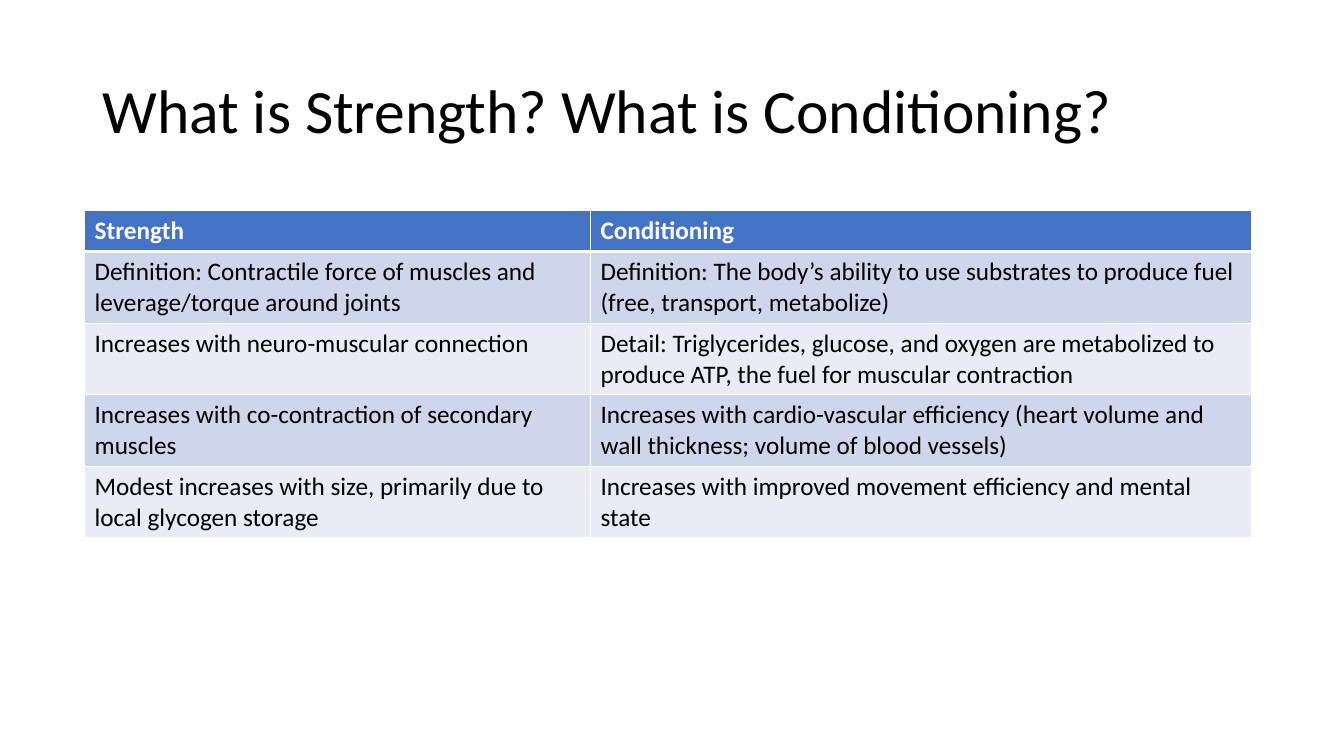
from dataclasses import dataclass

from lxml import etree
from pptx import Presentation
from pptx import util as u
from pptx.dml import color
from pptx.enum import text
from pptx.oxml import ns

Pt = u.Pt


@dataclass(frozen=True)
class Theme:
    font: str = "Calibri"
    title_size: int = 44
    table_size: int = 18
    ink: str = "000000"
    white: str = "FFFFFF"
    header: str = "4472C4"
    bands: tuple = ("CFD5EA", "E9EBF5")
    thin: int = 1
    thick: int = 3


THEME = Theme()
TITLE = "What is Strength? What is Conditioning?"
COLUMN_WIDTHS = (361.4, 472.4)
HEADER_HEIGHT = 29.2
ROW_HEIGHT = 51.1
ROWS = (
    ("Strength", "Conditioning"),
    (
        "Definition: Contractile force of muscles and leverage/torque around joints",
        "Definition: The body’s ability to use substrates to produce fuel (free, transport, metabolize)",
    ),
    (
        "Increases with neuro-muscular connection",
        "Detail: Triglycerides, glucose, and oxygen are metabolized to produce ATP, the fuel for muscular contraction",
    ),
    (
        "Increases with co-contraction of secondary muscles",
        "Increases with cardio-vascular efficiency (heart volume and wall thickness; volume of blood vessels)",
    ),
    (
        "Modest increases with size, primarily due to local glycogen storage",
        "Increases with improved movement efficiency and mental state",
    ),
)


def add_run(paragraph, wording, size, ink, bold=False):
    run = paragraph.add_run()
    run.text = wording
    run.font.name = THEME.font
    run.font.size = Pt(size)
    run.font.bold = bold
    run.font.color.rgb = color.RGBColor.from_string(ink)


def add_title(slide):
    title = slide.shapes.title
    title.left, title.top, title.width, title.height = Pt(66), Pt(28.8), Pt(828), Pt(104.4)
    frame = title.text_frame
    frame.word_wrap = True
    frame.auto_size = text.MSO_AUTO_SIZE.NONE
    frame.vertical_anchor = text.MSO_ANCHOR.MIDDLE
    paragraph = frame.paragraphs[0]
    paragraph.alignment = text.PP_ALIGN.LEFT
    paragraph.line_spacing = 0.9
    add_run(paragraph, TITLE, THEME.title_size, THEME.ink)


def add_border(cell, side, width):
    properties = cell._tc.get_or_add_tcPr()
    line = etree.SubElement(properties, ns.qn(f"a:ln{side}"), w=str(Pt(width)))
    fill = etree.SubElement(line, ns.qn("a:solidFill"))
    etree.SubElement(fill, ns.qn("a:srgbClr"), val=THEME.white)


def format_cell(cell, wording, row_index):
    is_header = row_index == 0
    top = THEME.thick if row_index == 1 else THEME.thin
    bottom = THEME.thick if is_header else THEME.thin
    for side, width in (("L", THEME.thin), ("R", THEME.thin), ("T", top), ("B", bottom)):
        add_border(cell, side, width)
    background = THEME.header if is_header else THEME.bands[(row_index - 1) % 2]
    cell.fill.solid()
    cell.fill.fore_color.rgb = color.RGBColor.from_string(background)
    ink = THEME.white if is_header else THEME.ink
    add_run(cell.text_frame.paragraphs[0], wording, THEME.table_size, ink, is_header)


def add_comparison_table(slide):
    height = HEADER_HEIGHT + ROW_HEIGHT * (len(ROWS) - 1)
    table = slide.shapes.add_table(
        len(ROWS), len(COLUMN_WIDTHS), Pt(60.4), Pt(150.5), Pt(sum(COLUMN_WIDTHS)), Pt(height)
    ).table
    for column, width in zip(table.columns, COLUMN_WIDTHS):
        column.width = Pt(width)
    for row_index, wordings in enumerate(ROWS):
        row = table.rows[row_index]
        row.height = Pt(ROW_HEIGHT if row_index else HEADER_HEIGHT)
        for cell, wording in zip(row.cells, wordings):
            format_cell(cell, wording, row_index)


def main():
    presentation = Presentation()
    presentation.slide_width = Pt(960)
    presentation.slide_height = Pt(540)
    slide = presentation.slides.add_slide(presentation.slide_layouts.get_by_name("Title Only"))
    add_title(slide)
    add_comparison_table(slide)
    presentation.save("out.pptx")


if __name__ == "__main__":
    main()
